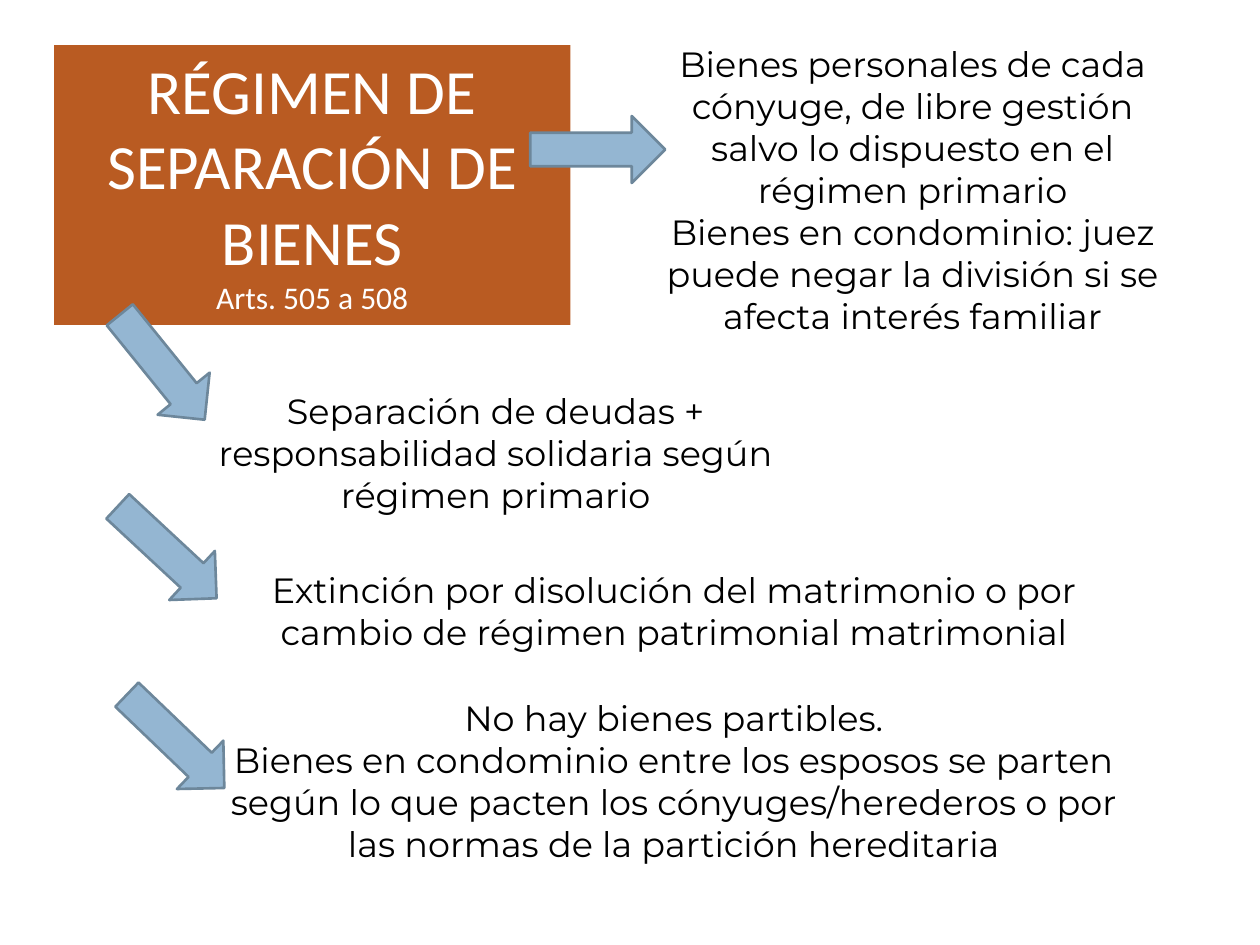
from pptx import Presentation
from pptx.dml.color import RGBColor
from pptx.enum import shapes, text
from pptx.util import Cm, Pt

ORANGE = RGBColor(0xB9, 0x5B, 0x22)
BLUE = RGBColor(0x94, 0xB6, 0xD2)
SLATE = RGBColor(0x6D, 0x87, 0x9B)
WHITE = RGBColor(0xFF, 0xFF, 0xFF)
BLACK = RGBColor(0x00, 0x00, 0x00)

TITLE_FORMAT = {"name": "Calibri", "size": Pt(36)}
ARTICLES_FORMAT = {"name": "Calibri", "size": Pt(18)}
RULE_FORMAT = {"name": "Montserrat", "size": Pt(20)}

ARROW_WIDTH, ARROW_HEIGHT = Cm(2.72), Cm(1.35)


def write_centred(frame, lines, color):
    """Fill the frame with one centred paragraph per (wording, format) pair."""
    frame.word_wrap = True
    frame.vertical_anchor = text.MSO_ANCHOR.TOP
    for index, (wording, font_format) in enumerate(lines):
        paragraph = frame.add_paragraph() if index else frame.paragraphs[0]
        paragraph.alignment = text.PP_ALIGN.CENTER
        run = paragraph.add_run()
        run.text = wording
        run.font.color.rgb = color
        for attribute, value in font_format.items():
            setattr(run.font, attribute, value)


deck = Presentation()
deck.slide_width, deck.slide_height = Cm(25.4), Cm(19.05)
slide = deck.slides.add_slide(deck.slide_layouts[6])

# Heading
heading = slide.shapes.add_shape(
    shapes.MSO_SHAPE.RECTANGLE, Cm(1.09), Cm(0.91), Cm(10.41), Cm(5.64))
heading.shadow.inherit = False
heading.fill.solid()
heading.fill.fore_color.rgb = ORANGE
heading.line.fill.background()
write_centred(heading.text_frame, [
    ("RÉGIMEN DE SEPARACIÓN DE BIENES", TITLE_FORMAT),
    ("Arts. 505 a 508", ARTICLES_FORMAT),
], WHITE)

# Arrows from the heading to each rule: left, top, rotation
for left, top, rotation in [
    (10.69, 2.34, 0),
    (1.91, 6.73, 51),
    (2.01, 10.46, 42.9),
    (2.18, 14.27, 43.8),
]:
    arrow = slide.shapes.add_shape(
        shapes.MSO_SHAPE.RIGHT_ARROW, Cm(left), Cm(top), ARROW_WIDTH, ARROW_HEIGHT)
    arrow.rotation = rotation
    arrow.shadow.inherit = False
    arrow.fill.solid()
    arrow.fill.fore_color.rgb = BLUE
    arrow.line.color.rgb = SLATE
    arrow.line.width = Pt(1.5)

# Rules of the regime: left, top, width, height and paragraphs
rules = [
    ((12.9, 0.74, 11, 7.09), [
        "Bienes personales de cada cónyuge, de libre gestión salvo lo dispuesto "
        "en el régimen primario",
        "Bienes en condominio: juez puede negar la división si se afecta "
        "interés familiar",
    ]),
    ((3.1, 7.72, 13.79, 2.82), [
        "Separación de deudas + responsabilidad solidaria según régimen primario",
    ]),
    ((4.09, 11.33, 19, 1.96), [
        "Extinción por disolución del matrimonio o por cambio de régimen "
        "patrimonial matrimonial",
    ]),
    ((4.29, 13.92, 18.59, 4.52), [
        "No hay bienes partibles.",
        "Bienes en condominio entre los esposos se parten según lo que pacten "
        "los cónyuges/herederos o por las normas de la partición hereditaria",
    ]),
]
for bounds, paragraphs in rules:
    rule = slide.shapes.add_textbox(*map(Cm, bounds))
    write_centred(rule.text_frame, [(p, RULE_FORMAT) for p in paragraphs], BLACK)

deck.save("out.pptx")
